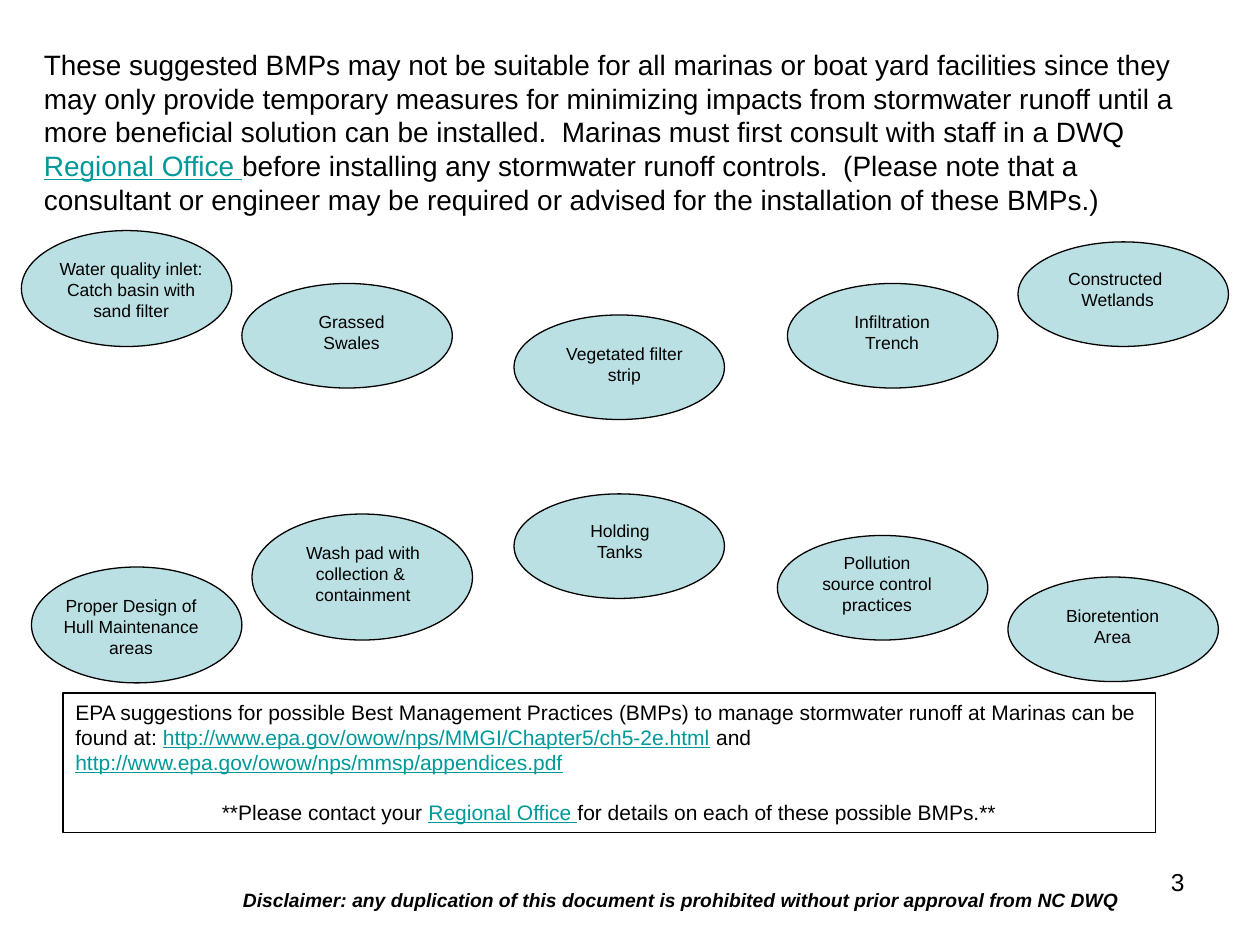
import pptx
import pptx.dml.color
import pptx.enum.shapes
import pptx.enum.text
import pptx.util

Inches = pptx.util.Inches
Pt = pptx.util.Pt
PP_ALIGN = pptx.enum.text.PP_ALIGN
MSO_SHAPE = pptx.enum.shapes.MSO_SHAPE


class Theme:
    font = "Arial"
    ink = pptx.dml.color.RGBColor.from_string("000000")
    link = pptx.dml.color.RGBColor.from_string("009999")
    bubble = pptx.dml.color.RGBColor.from_string("BBE0E3")
    outline = Pt(0.75)
    intro, number, resources, disclaimer, label = Pt(16), Pt(14), Pt(12), Pt(11), Pt(10)


def write(holder, paragraphs, size, align=PP_ALIGN.LEFT, grow=True):
    """Fill a shape with paragraphs, each a list of (text, is_link) runs."""
    frame = holder.text_frame
    frame.word_wrap = True
    frame.vertical_anchor = pptx.enum.text.MSO_ANCHOR.TOP
    if grow:
        frame.auto_size = pptx.enum.text.MSO_AUTO_SIZE.SHAPE_TO_FIT_TEXT
    for index, runs in enumerate(paragraphs):
        paragraph = frame.add_paragraph() if index else frame.paragraphs[0]
        paragraph.alignment = align
        for text, is_link in runs:
            run = paragraph.add_run()
            run.text = text
            run.font.name = Theme.font
            run.font.size = size
            run.font.color.rgb = Theme.link if is_link else Theme.ink
            if is_link:
                run.font.underline = True
    return frame


def outlined(kind, left, top, width, height):
    shape = slide.shapes.add_shape(
        kind, Inches(left), Inches(top), Inches(width), Inches(height))
    shape.shadow.inherit = False
    shape.line.color.rgb = Theme.ink
    shape.line.width = Theme.outline
    return shape


deck = pptx.Presentation()
deck.slide_width, deck.slide_height = Inches(10), Inches(7.5)
slide = deck.slides.add_slide(deck.slide_layouts[6])

# Slide number
page_number = slide.shapes.add_textbox(Inches(7.17), Inches(6.83), Inches(2.33), Inches(0.52))
write(page_number, [[("3", False)]], Theme.number, PP_ALIGN.RIGHT, grow=False)

# Practices: ellipse (left, top, width, height), label (left, top, width, height), lines
practices = [
    ((0.17, 1.83, 1.67, 0.92), (0.25, 2, 1.58, 0.85),
     ["Water quality inlet:", "Catch basin with", "sand filter"]),
    ((1.92, 2.25, 1.67, 0.83), (2.25, 2.42, 1.08, 0.43), ["Grassed Swales"]),
    ((4.08, 2.5, 1.67, 0.83), (4.33, 2.67, 1.25, 0.43), ["Vegetated filter strip"]),
    ((6.25, 2.25, 1.67, 0.83), (6.58, 2.42, 1, 0.43), ["Infiltration Trench"]),
    ((8.08, 1.92, 1.67, 0.83), (8.33, 2.08, 1.08, 0.68), ["Constructed ", "Wetlands"]),
    ((8, 4.58, 1.67, 0.83), (8.33, 4.75, 1, 0.89), ["Bioretention Area"]),
    ((4.08, 3.92, 1.67, 0.83), (4.42, 4.08, 1, 0.43), ["Holding Tanks"]),
    ((2, 4.08, 1.75, 1), (2.17, 4.25, 1.42, 0.6),
     ["Wash pad with", "collection & ", "containment"]),
    ((0.25, 4.5, 1.67, 0.92), (0.33, 4.67, 1.42, 0.85),
     ["Proper Design of", "Hull Maintenance", "areas"]),
    ((6.17, 4.25, 1.67, 0.83), (6.42, 4.33, 1.08, 0.85),
     ["Pollution source control practices"]),
]
for bubble_place, label_place, lines in practices:
    bubble = outlined(MSO_SHAPE.OVAL, *bubble_place)
    bubble.fill.solid()
    bubble.fill.fore_color.rgb = Theme.bubble
    label = slide.shapes.add_textbox(*(Inches(length) for length in label_place))
    write(label, [[(line, False)] for line in lines], Theme.label, PP_ALIGN.CENTER)

# Introduction
intro = slide.shapes.add_textbox(Inches(0.25), Inches(0.33), Inches(9.42), Inches(1.45))
write(intro, [[
    ("These suggested BMPs may not be suitable for all marinas or boat yard facilities "
     "since they may only provide temporary measures for minimizing impacts from "
     "stormwater runoff until a more beneficial solution can be installed.  Marinas must "
     "first consult with staff in a DWQ ", False),
    ("Regional Office ", True),
    ("before installing any stormwater runoff controls.  (Please note that a consultant "
     "or engineer may be required or advised for the installation of these BMPs.)", False),
]], Theme.intro)

# Resources box
resources = outlined(MSO_SHAPE.RECTANGLE, 0.5, 5.5, 8.67, 1.11)
resources.fill.background()
resources_text = write(resources, [
    [("EPA suggestions for possible Best Management Practices (BMPs) to manage stormwater "
      "runoff at Marinas can be found at: ", False),
     ("http://www.epa.gov/owow/nps/MMGI/Chapter5/ch5-2e.html", True),
     (" and ", False),
     ("http://www.epa.gov/owow/nps/mmsp/appendices.pdf", True)],
    [("**Please contact your ", False),
     ("Regional Office ", True),
     ("for details on each of these possible BMPs.**", False)],
], Theme.resources)
contact_note = resources_text.paragraphs[1]
contact_note.alignment = PP_ALIGN.CENTER
contact_note.space_before = Pt(14)

# Disclaimer
disclaimer = slide.shapes.add_textbox(Inches(1.83), Inches(7), Inches(7.25), Inches(0.29))
disclaimer_text = write(disclaimer, [[
    ("Disclaimer: any duplication of this document is prohibited without prior approval "
     "from NC DWQ", False)]], Theme.disclaimer)
disclaimer_font = disclaimer_text.paragraphs[0].runs[0].font
disclaimer_font.bold = disclaimer_font.italic = True

deck.save("out.pptx")
